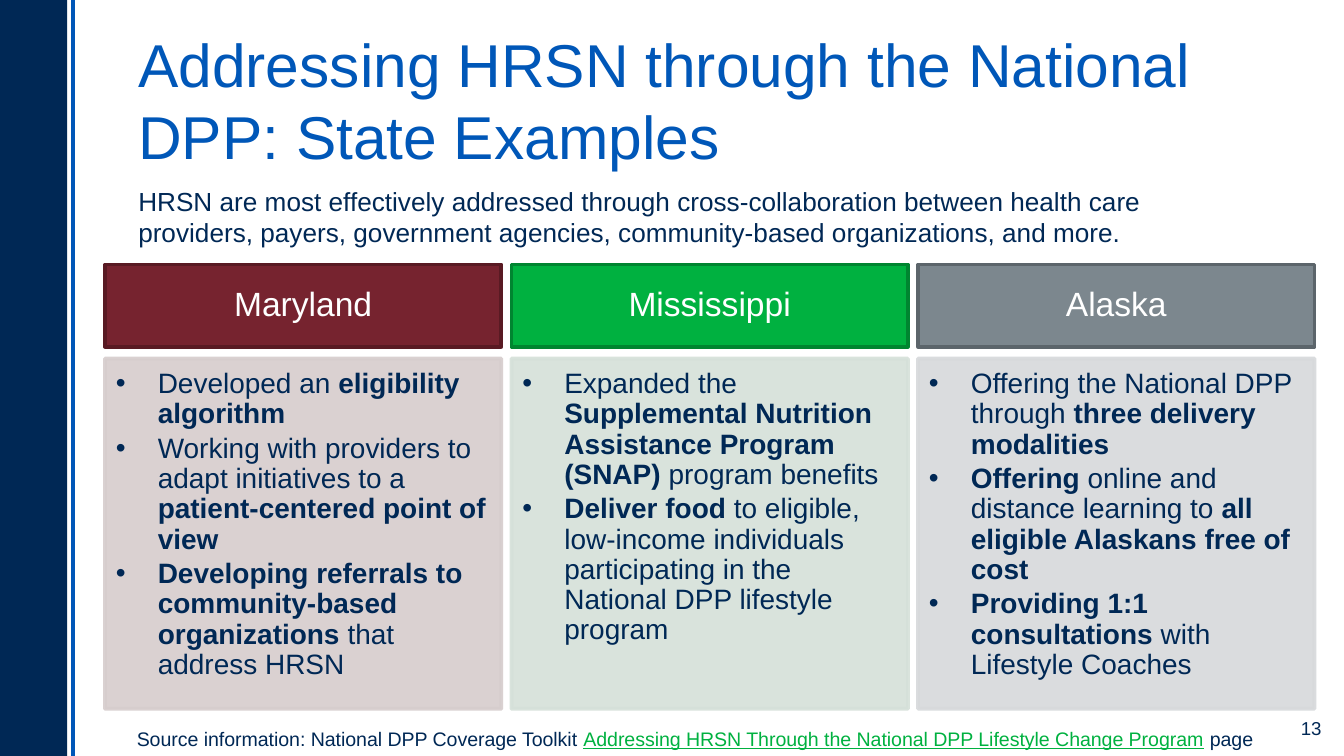
from lxml.etree import SubElement
from pptx import Presentation
from pptx.dml.color import RGBColor
from pptx.enum.shapes import MSO_CONNECTOR, MSO_SHAPE
from pptx.enum.text import MSO_ANCHOR, PP_ALIGN
from pptx.oxml.ns import qn
from pptx.util import Pt

NAVY = RGBColor(0x00, 0x28, 0x55)
BLUE = RGBColor(0x00, 0x57, 0xB8)
GREEN = RGBColor(0x00, 0xB1, 0x40)
DARK_GREEN = RGBColor(0x00, 0x85, 0x30)
PALE_GREEN = RGBColor(0xD5, 0xE0, 0xD9)
MAROON = RGBColor(0x76, 0x23, 0x2F)
DARK_MAROON = RGBColor(0x59, 0x1A, 0x23)
PALE_MAROON = RGBColor(0xD6, 0xCD, 0xCD)
GRAY = RGBColor(0x7C, 0x87, 0x8E)
DARK_GRAY = RGBColor(0x5C, 0x65, 0x6B)
PALE_GRAY = RGBColor(0xD7, 0xD9, 0xDB)
WHITE = RGBColor(0xFF, 0xFF, 0xFF)

FONT = "Arial"
PAGE_WIDTH, PAGE_HEIGHT = 720, 405
COLUMN_WIDTH, COLUMN_GAP = 212.4, 5.4
HEADER_HEIGHT, HEADER_GAP = 44, 6.3

# Double asterisks enclose bold words
STATES = [
    ("Maryland", MAROON, DARK_MAROON, PALE_MAROON, [
        "Developed an **eligibility algorithm**",
        "Working with providers to adapt initiatives to a "
        "**patient-centered point of view**",
        "**Developing referrals to community-based organizations** that address HRSN",
    ]),
    ("Mississippi", GREEN, DARK_GREEN, PALE_GREEN, [
        "Expanded the **Supplemental Nutrition Assistance Program (SNAP) **program benefits",
        "**Deliver food **to eligible, low-income individuals participating "
        "in the National DPP lifestyle program",
    ]),
    ("Alaska", GRAY, DARK_GRAY, PALE_GRAY, [
        "Offering the National DPP through **three delivery modalities**",
        "**Offering **online and distance learning to **all eligible Alaskans free of cost**",
        "**Providing 1:1 consultations **with Lifestyle Coaches",
    ]),
]


def add_bullet(para, indent):
    properties = para._p.get_or_add_pPr()
    properties.set("marL", str(Pt(indent)))
    properties.set("indent", str(-Pt(indent)))
    SubElement(properties, qn("a:buFont"), typeface=FONT)
    SubElement(properties, qn("a:buChar"), char="•")


def write_text(shape, paragraphs, size, color=NAVY, align=PP_ALIGN.LEFT,
               anchor=MSO_ANCHOR.TOP, insets=(7.2, 3.6, 7.2, 3.6),
               line_spacing=None, space_after=None, bullet_indent=None):
    frame = shape.text_frame
    frame.word_wrap = True
    frame.vertical_anchor = anchor
    (frame.margin_left, frame.margin_top,
     frame.margin_right, frame.margin_bottom) = map(Pt, insets)
    for index, text in enumerate(paragraphs):
        para = frame.add_paragraph() if index else frame.paragraphs[0]
        para.alignment = align
        if line_spacing:
            para.line_spacing = line_spacing
        if space_after:
            para.space_after = Pt(space_after)
        if bullet_indent:
            add_bullet(para, bullet_indent)
        para.font.name, para.font.size = FONT, Pt(size)
        para.font.color.rgb = color
        for part, words in enumerate(text.split("**")):
            if words:
                span = para.add_run()
                span.text = words
                span.font.name, span.font.size = FONT, Pt(size)
                span.font.bold = part % 2 == 1
                span.font.color.rgb = color
    return frame


def add_text(page, box, paragraphs, size, **text_format):
    shape = page.shapes.add_textbox(*map(Pt, box))
    return write_text(shape, paragraphs, size, **text_format)


def add_rectangle(page, box, fill, line=None, opacity=None):
    shape = page.shapes.add_shape(MSO_SHAPE.RECTANGLE, *map(Pt, box))
    shape.shadow.inherit = False
    shape.fill.solid()
    shape.fill.fore_color.rgb = fill
    if line is None:
        shape.line.fill.background()
    else:
        shape.line.color.rgb = line
        shape.line.width = Pt(2)
    if opacity:
        for color in shape._element.spPr.iter(qn("a:srgbClr")):
            SubElement(color, qn("a:alpha"), val=str(opacity * 1000))
    return shape


def add_side_band(page, box):
    left, top, width, height = box
    rule_x = left + width + 2.9
    rule = page.shapes.add_connector(
        MSO_CONNECTOR.STRAIGHT, Pt(rule_x), Pt(top + height), Pt(rule_x), Pt(top))
    rule.line.color.rgb = BLUE
    rule.line.width = Pt(2.25)
    SubElement(rule._element.spPr, qn("a:effectLst"))
    add_rectangle(page, box, NAVY)


def add_heading(page, box):
    left, top, width, height = box
    title_height = 80.6
    add_text(page, (left, top, width, title_height),
             ["Addressing HRSN through the National DPP: State Examples"],
             32.4, color=BLUE, anchor=MSO_ANCHOR.BOTTOM)
    add_text(page, (left, top + title_height, width, height - title_height),
             ["HRSN are most effectively addressed through cross-collaboration between "
              "health care providers, payers, government agencies, community-based "
              "organizations, and more."], 14)


def add_state(page, box, name, fill, line, tint, points):
    left, top, width, height = box
    header = add_rectangle(page, (left, top, width, HEADER_HEIGHT), fill, line)
    write_text(header, [name], 18, color=WHITE, align=PP_ALIGN.CENTER,
               anchor=MSO_ANCHOR.MIDDLE, insets=(7.2, 4.3, 7.2, 4.3), line_spacing=0.9)
    offset = HEADER_HEIGHT + HEADER_GAP
    panel = add_rectangle(page, (left, top + offset, width, height - offset),
                          tint, tint, opacity=90)
    write_text(panel, points, 15, insets=(5.8, 5.8, 7.2, 7.9),
               line_spacing=0.9, space_after=2.25, bullet_indent=22.5)


def add_columns(page, box):
    left, top, width, height = box
    for index, state in enumerate(STATES):
        x = left + index * (width + COLUMN_GAP)
        add_state(page, (x, top, width, height), *state)


def add_footer(page, box):
    frame = add_text(page, box, ["Source information: National DPP Coverage Toolkit "], 10.5)
    para = frame.paragraphs[0]
    for words, color, underlined in [
        ("Addressing HRSN Through the National DPP Lifestyle Change Program", GREEN, True),
        (" page", NAVY, False),
    ]:
        span = para.add_run()
        span.text = words
        span.font.name, span.font.size = FONT, Pt(10.5)
        span.font.color.rgb = color
        span.font.underline = underlined


def main():
    deck = Presentation()
    deck.slide_width, deck.slide_height = Pt(PAGE_WIDTH), Pt(PAGE_HEIGHT)
    page = deck.slides.add_slide(deck.slide_layouts[6])

    # Side band and page number
    add_side_band(page, (0, 0, 36, PAGE_HEIGHT))
    add_text(page, (648, 379.4, 67, 21.6), ["13"], 10,
             align=PP_ALIGN.RIGHT, anchor=MSO_ANCHOR.MIDDLE)

    # Title and introduction
    add_heading(page, (67, 15.1, 617, 369.4))

    # One column for each state
    add_columns(page, (56.2, 141.8, COLUMN_WIDTH, 238))

    # Source line
    add_footer(page, (66.2, 385.9, 622.8, 20.2))

    deck.save("out.pptx")


if __name__ == "__main__":
    main()
